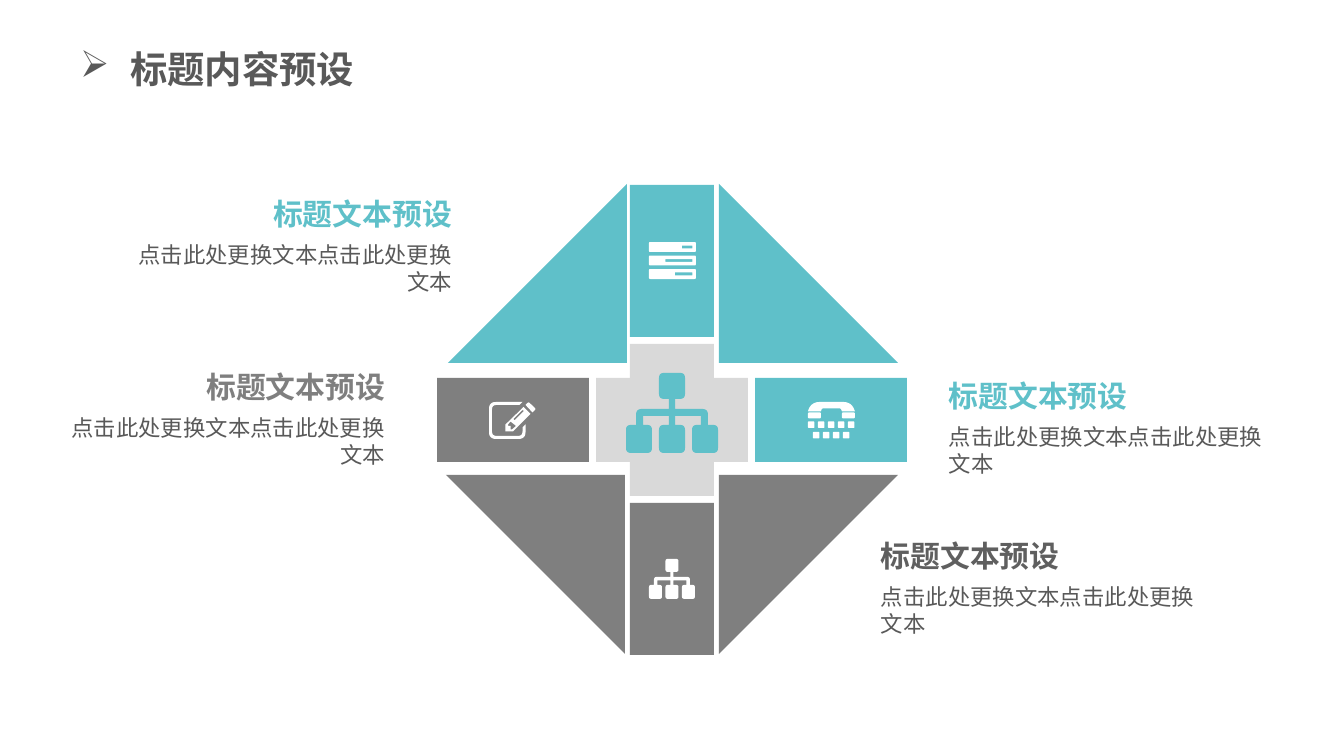
from lxml.etree import SubElement
from pptx import Presentation
from pptx.dml.color import RGBColor
from pptx.enum.shapes import MSO_SHAPE as Kind
from pptx.enum.text import MSO_ANCHOR as Anchor, MSO_AUTO_SIZE as Fit, PP_ALIGN as Align
from pptx.oxml.ns import qn
from pptx.util import Pt

FONT = "Noto Sans CJK SC"
TEAL, GRAY, PALE, DARK, WHITE = "5FC0C9", "7F7F7F", "D9D9D9", "595959", "FFFFFF"
px = 9144000 / 1344
rgb = RGBColor.from_string


def write(shape, text, size=12, color=DARK, bold=False, align=Align.LEFT,
          anchor=Anchor.MIDDLE, wrap=True, pads=(13, 7, 13, 7)):
    frame = shape.text_frame
    frame.auto_size = Fit.NONE
    frame.word_wrap = wrap
    frame.vertical_anchor = anchor
    (frame.margin_left, frame.margin_top,
     frame.margin_right, frame.margin_bottom) = [round(n * px) for n in pads]
    para = frame.paragraphs[0]
    para.alignment = align
    run = para.add_run()
    run.text = text
    font = run.font
    font.name, font.size, font.bold = FONT, Pt(size), bold
    font.color.rgb = rgb(color)
    SubElement(font._element, qn("a:ea"), typeface=FONT)
    return para


def outline(*spots):
    """Trace corners (x, y, radius) in hundredths; two corners span a box."""
    if len(spots) == 2:
        (x, y, r), (x2, y2, r) = spots
        spots = [(x, y, r), (x2, y, r), (x2, y2, r), (x, y2, r)]
    trail = []
    for i, (x, y, r) in enumerate(spots):
        if not r:
            trail.append((x * 100, y * 100))
            continue
        ends = []
        for nx, ny, _ in (spots[i - 1], spots[(i + 1) % len(spots)]):
            part = r / ((nx - x) ** 2 + (ny - y) ** 2) ** 0.5
            ends.append((x + (nx - x) * part, y + (ny - y) * part))
        (ax, ay), (bx, by) = ends
        for step in range(7):
            t = step / 6
            a, c, b = (1 - t) ** 2, 2 * t * (1 - t), t * t
            trail.append((100 * (a * ax + c * x + b * bx),
                          100 * (a * ay + c * y + b * by)))
    return trail


deck = Presentation()
deck.slide_width, deck.slide_height = round(1344 * px), round(756 * px)
slide = deck.slides.add_slide(deck.slide_layouts[5])
shapes = slide.shapes

# Title with arrow bullet
title = shapes.title
title.left, title.top, title.width, title.height = [
    round(n * px) for n in (67, 39, 378, 59)]
para = write(title, "标题内容预设", size=20, bold=True, anchor=Anchor.TOP)
props = para._p.get_or_add_pPr()
props.set("marL", str(round(50 * px)))
props.set("indent", str(round(-50 * px)))
SubElement(props, qn("a:buChar"), char="➢")

# Cross of bars, with a triangle in each corner
long, short, gap, side = 152, 84, 159, 179
left, top = 437, 185
midx, midy = 630, 378
parts = [
    (Kind.RECTANGLE, midx, top + gap, short, long, PALE, ""),
    (Kind.RECTANGLE, left + gap, midy, long, short, PALE, ""),
    (Kind.RECTANGLE, left, midy, long, short, GRAY, ""),
    (Kind.RECTANGLE, left + 2 * gap, midy, long, short, TEAL, ""),
    (Kind.RECTANGLE, midx, top + 2 * gap, short, long, GRAY, ""),
    (Kind.RECTANGLE, midx, top, short, long, TEAL, ""),
    (Kind.RIGHT_TRIANGLE, 719, 184, side, side, TEAL, ""),
    (Kind.RIGHT_TRIANGLE, 719, 475, side, side, GRAY, "V"),
    (Kind.RIGHT_TRIANGLE, 448, 184, side, side, TEAL, "H"),
    (Kind.RIGHT_TRIANGLE, 446, 475, side, side, GRAY, "HV"),
]
for kind, x, y, w, h, color, flips in parts:
    part = shapes.add_shape(kind, *[round(n * px) for n in (x, y, w, h)])
    part.shadow.inherit = False
    part.fill.solid()
    part.fill.fore_color.rgb = rgb(color)
    part.line.fill.background()
    for flip in flips:
        part._element.spPr.xfrm.set("flip" + flip, "1")

# Icons
half = [(59, 0, 5), (59, 26, 5), (49, 26, 0), (49, 36, 0), (82, 36, 6),
        (82, 52, 0), (92, 52, 5), (92, 80, 5), (66, 80, 5), (66, 52, 5),
        (75, 52, 0), (75, 43, 0), (49, 43, 0), (49, 52, 0), (59, 52, 5), (59, 80, 5)]
tree = [outline(*half, *[(92 - x, y, r) for x, y, r in reversed(half)])]

stack = []
for row, slot in enumerate((66, 33, 52)):
    y = 27 * row
    stack.append(outline((0, y, 3), (94, y + 20, 3)))
    stack.append(outline((slot, y + 7, 0), (87, y + 13, 0)))

phone = [
    outline((0, 19, 0), (6, 0, 18), (88, 0, 18), (94, 19, 0),
            (68, 19, 0), (66, 13, 3), (28, 13, 3), (26, 19, 0)),
    outline((0, 21, 3), (26, 33, 3)),
    outline((68, 21, 3), (94, 33, 3)),
]
for x, y, count in ((0, 39, 5), (10, 60, 4)):
    for key in range(count):
        phone.append(outline((x + 20 * key, y, 2), (x + 20 * key + 13, y + 13, 2)))

pencil = [
    outline((67, 0, 0), (0, 0, 14), (0, 74, 14), (73, 74, 14), (73, 45, 0),
            (67, 51, 0), (67, 68, 9), (6, 68, 9), (6, 6, 9), (61, 6, 0)),
    outline((83, 24, 0), (48, 59, 0), (33, 59, 0), (33, 45, 0), (69, 10, 0)),
    outline((54, 48, 0), (43, 39, 0), (38, 45, 0), (38, 48, 0),
            (43, 48, 0), (43, 55, 0), (46, 55, 0)),
    outline((67, 16, 0), (49, 34, 0), (51, 37, 0), (70, 18, 0)),
    outline((73, 6, 0), (79, 0, 3), (94, 14, 4), (87, 21, 0)),
]
for icon, x, y, scale, color in (
        (pencil, 489, 402, 0.5, WHITE), (phone, 808, 402, 0.5, WHITE),
        (tree, 649, 559, 0.5, WHITE), (stack, 649, 242, 0.5, WHITE),
        (tree, 626, 373, 1, TEAL)):
    pen = shapes.build_freeform(*icon[0][0], scale=scale * px / 100)
    for i, trail in enumerate(icon):
        if i:
            pen.move_to(*trail[0])
        pen.add_line_segments(trail[1:], close=True)
    mark = pen.convert_to_shape(round(x * px), round(y * px))
    mark.shadow.inherit = False
    mark.fill.solid()
    mark.fill.fore_color.rgb = rgb(color)
    mark.line.fill.background()

# Captions: x is the right edge on the left side, the left edge on the right
for x, y, color, align in (
        (504, 198, TEAL, Align.RIGHT), (907, 380, TEAL, Align.LEFT),
        (437, 371, GRAY, Align.RIGHT), (839, 540, "5F5F5F", Align.LEFT)):
    if align == Align.RIGHT:
        wide, full, pads = 284, 375, (0, 0, 52, 0)
    else:
        wide, full, pads = 316, 414, (42, 0, 42, 0)
    for text, w, h, drop, look in (
            ("标题文本预设", wide, 32, 0,
             dict(size=16, color=color, bold=True, wrap=False)),
            ("点击此处更换文本点击此处更换文本", full, 62, 39, {})):
        start = x - w if align == Align.RIGHT else x
        box = shapes.add_textbox(*[round(n * px) for n in (start, y + drop, w, h)])
        write(box, text, align=align, pads=pads, **look)

deck.save("out.pptx")
